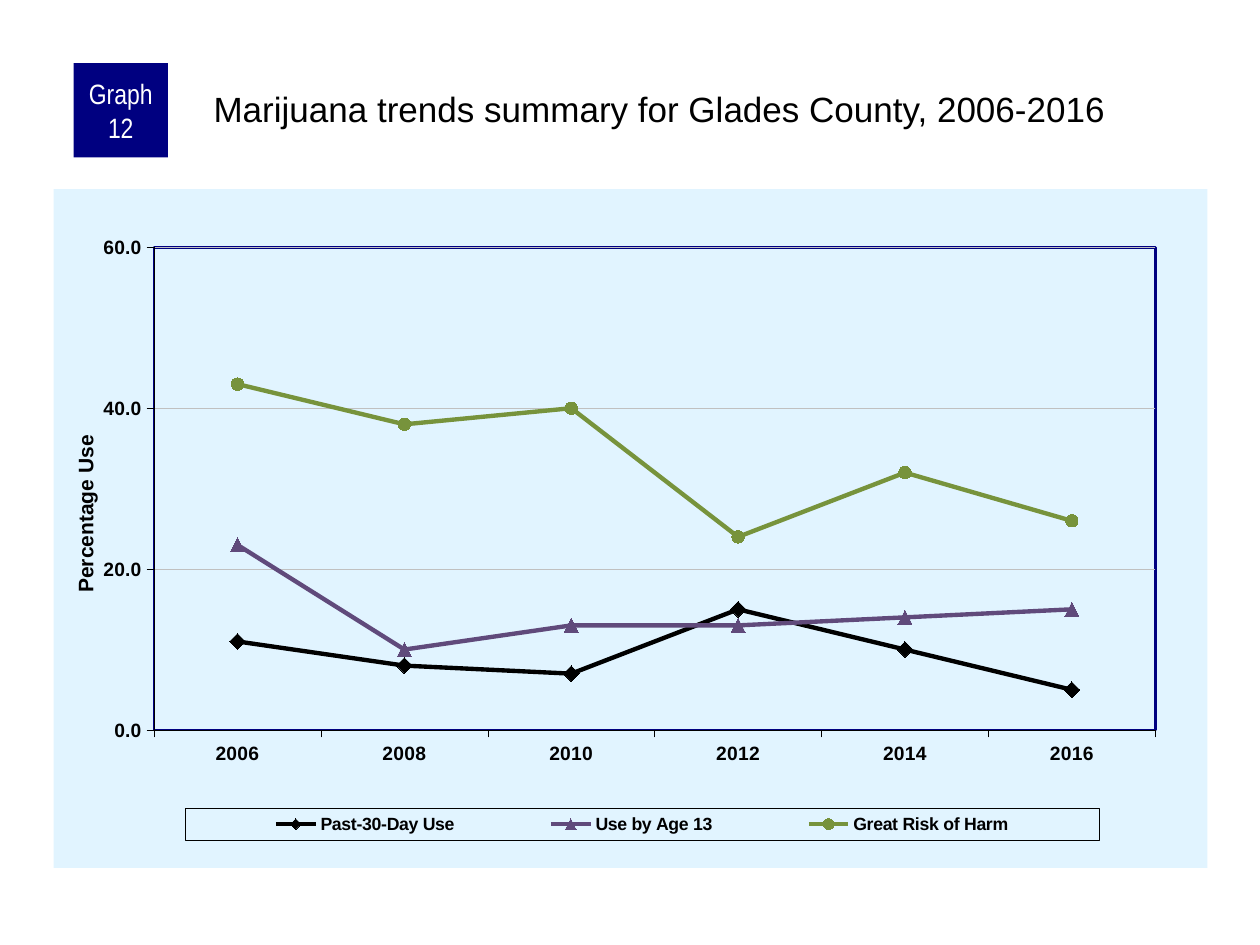
from dataclasses import dataclass

import lxml.etree
import pptx
import pptx.chart.data
import pptx.dml.color
import pptx.enum.chart
import pptx.enum.shapes
import pptx.enum.text
import pptx.oxml
import pptx.oxml.ns
import pptx.util

Pt = pptx.util.Pt
Marker = pptx.enum.chart.XL_MARKER_STYLE
qn = pptx.oxml.ns.qn

COLORS = {
    "black": "000000",
    "white": "FFFFFF",
    "navy": "000080",
    "panel": "E1F4FF",
    "grid": "C0C0C0",
    "purple": "604A7B",
    "green": "77933C",
}
YEARS = ["2006", "2008", "2010", "2012", "2014", "2016"]


@dataclass(frozen=True)
class Trend:
    name: str
    percentages: tuple[int, ...]
    color: str
    marker: Marker
    marker_size: int


TRENDS = [
    Trend("Past-30-Day Use", (11, 8, 7, 15, 10, 5), "black", Marker.DIAMOND, 9),
    Trend("Use by Age 13", (23, 10, 13, 13, 14, 15), "purple", Marker.TRIANGLE, 8),
    Trend("Great Risk of Harm", (43, 38, 40, 24, 32, 26), "green", Marker.CIRCLE, 7),
]


def rgb(color: str) -> pptx.dml.color.RGBColor:
    return pptx.dml.color.RGBColor.from_string(COLORS[color])


def style_font(font, size: float, color: str = "black", bold: bool = False, name: str = "Arial") -> None:
    font.size = Pt(size)
    font.bold = bold
    font.name = name
    font.color.rgb = rgb(color)


def style_line(line, color: str, width: float) -> None:
    line.color.rgb = rgb(color)
    line.width = Pt(width)


def set_insets(frame, left: float, top: float, right: float, bottom: float) -> None:
    frame.margin_left, frame.margin_top = Pt(left), Pt(top)
    frame.margin_right, frame.margin_bottom = Pt(right), Pt(bottom)


def place_part(part, index: int, inner: bool = False, **fractions: float) -> None:
    """Give a chart part a manual layout in fractions of the chart."""
    for old in part.findall(qn("c:layout")):
        part.remove(old)
    layout = lxml.etree.Element(qn("c:layout"))
    manual = lxml.etree.SubElement(layout, qn("c:manualLayout"))
    settings = {"layoutTarget": "inner"} if inner else {}
    settings |= {"xMode": "edge", "yMode": "edge"} | fractions
    for tag, value in settings.items():
        lxml.etree.SubElement(manual, qn(f"c:{tag}")).set("val", str(value))
    part.insert(index, layout)


def shape_format(fill: str | None, line: str | None, width: float = 0):
    """Build the c:spPr of a chart part; None means no paint."""
    def paint(color: str | None) -> str:
        if color is None:
            return "<a:noFill/>"
        return f'<a:solidFill><a:srgbClr val="{COLORS[color]}"/></a:solidFill>'

    return pptx.oxml.parse_xml(
        f'<c:spPr {pptx.oxml.ns.nsdecls("c", "a")}>{paint(fill)}'
        f'<a:ln w="{Pt(width)}">{paint(line)}</a:ln></c:spPr>'
    )


def add_heading(slide) -> None:
    heading = slide.shapes.title
    heading.left, heading.top, heading.width, heading.height = Pt(120), Pt(48), Pt(570), Pt(60)
    frame = heading.text_frame
    frame.text = "Marijuana trends summary for Glades County, 2006-2016"
    frame.word_wrap = True
    frame.auto_size = pptx.enum.text.MSO_AUTO_SIZE.NONE
    frame.vertical_anchor = pptx.enum.text.MSO_ANCHOR.TOP
    set_insets(frame, 2, 2, 0, 0)
    frame.paragraphs[0].alignment = pptx.enum.text.PP_ALIGN.LEFT
    style_font(frame.paragraphs[0].runs[0].font, 20)


def add_graph_number(slide) -> None:
    badge = slide.shapes.add_shape(
        pptx.enum.shapes.MSO_SHAPE.RECTANGLE, Pt(42), Pt(36), Pt(54), Pt(54)
    )
    badge.shadow.inherit = False
    badge.fill.solid()
    badge.fill.fore_color.rgb = rgb("navy")
    badge.line.fill.background()
    frame = badge.text_frame
    frame.text = "Graph 12"
    frame.word_wrap = True
    frame.vertical_anchor = pptx.enum.text.MSO_ANCHOR.MIDDLE
    set_insets(frame, 3.6, 0, 3.6, 0)
    frame.paragraphs[0].alignment = pptx.enum.text.PP_ALIGN.CENTER
    style_font(frame.paragraphs[0].runs[0].font, 16, "white", name="Arial Narrow")


def style_axes(chart) -> None:
    for axis in (chart.category_axis, chart.value_axis):
        axis.major_tick_mark = pptx.enum.chart.XL_TICK_MARK.OUTSIDE
        axis.minor_tick_mark = pptx.enum.chart.XL_TICK_MARK.NONE
        style_line(axis.format.line, "black", 0.25)
        style_font(axis.tick_labels.font, 11, bold=True)
    percent_axis = chart.value_axis
    percent_axis.minimum_scale, percent_axis.maximum_scale = 0, 60
    percent_axis.major_unit = 20
    percent_axis.tick_labels.number_format = "0.0"
    percent_axis.tick_labels.number_format_is_linked = False
    percent_axis.has_major_gridlines = True
    style_line(percent_axis.major_gridlines.format.line, "grid", 0.25)
    caption = percent_axis.axis_title.text_frame
    caption.text = "Percentage Use"
    style_font(caption.paragraphs[0].runs[0].font, 12, bold=True)
    place_part(percent_axis._element.find(qn("c:title")), 1, x=0.013, y=0.357)


def style_trend(series, trend: Trend) -> None:
    series.smooth = False
    style_line(series.format.line, trend.color, 2.5)
    marker = series.marker
    marker.style, marker.size = trend.marker, trend.marker_size
    marker.format.fill.solid()
    marker.format.fill.fore_color.rgb = rgb(trend.color)
    style_line(marker.format.line, trend.color, 0.75)


def add_trend_chart(slide) -> None:
    data = pptx.chart.data.CategoryChartData(number_format="0")
    data.categories = YEARS
    for trend in TRENDS:
        data.add_series(trend.name, trend.percentages)
    chart = slide.shapes.add_chart(
        pptx.enum.chart.XL_CHART_TYPE.LINE_MARKERS, Pt(30.7), Pt(108), Pt(659.2), Pt(388), data
    ).chart
    chart.has_title = False
    style_font(chart.font, 8)
    chart.plots[0].vary_by_categories = False
    style_axes(chart)
    for series, trend in zip(chart.plots[0].series, TRENDS):
        style_trend(series, trend)

    chart.has_legend = True
    legend = chart.legend
    legend.position = pptx.enum.chart.XL_LEGEND_POSITION.RIGHT
    legend.include_in_layout = False
    style_font(legend.font, 10.1, bold=True)
    place_part(legend._element, 1, x=0.114, y=0.912, w=0.792, h=0.047)
    legend._element.find(qn("c:overlay")).addnext(shape_format(None, "black", 0.25))

    chart_space = chart._chartSpace
    chart_space.find(qn("c:chart")).addnext(shape_format("panel", None))
    plot_area = chart_space.find(f".//{qn('c:plotArea')}")
    place_part(plot_area, 0, inner=True, x=0.087, y=0.086, w=0.868, h=0.711)
    plot_area.append(shape_format(None, "navy", 1.5))


def main() -> None:
    presentation = pptx.Presentation()
    presentation.slide_width, presentation.slide_height = Pt(720), Pt(540)
    slide = presentation.slides.add_slide(presentation.slide_layouts[5])
    add_heading(slide)
    add_graph_number(slide)
    add_trend_chart(slide)
    presentation.save("out.pptx")


if __name__ == "__main__":
    main()
